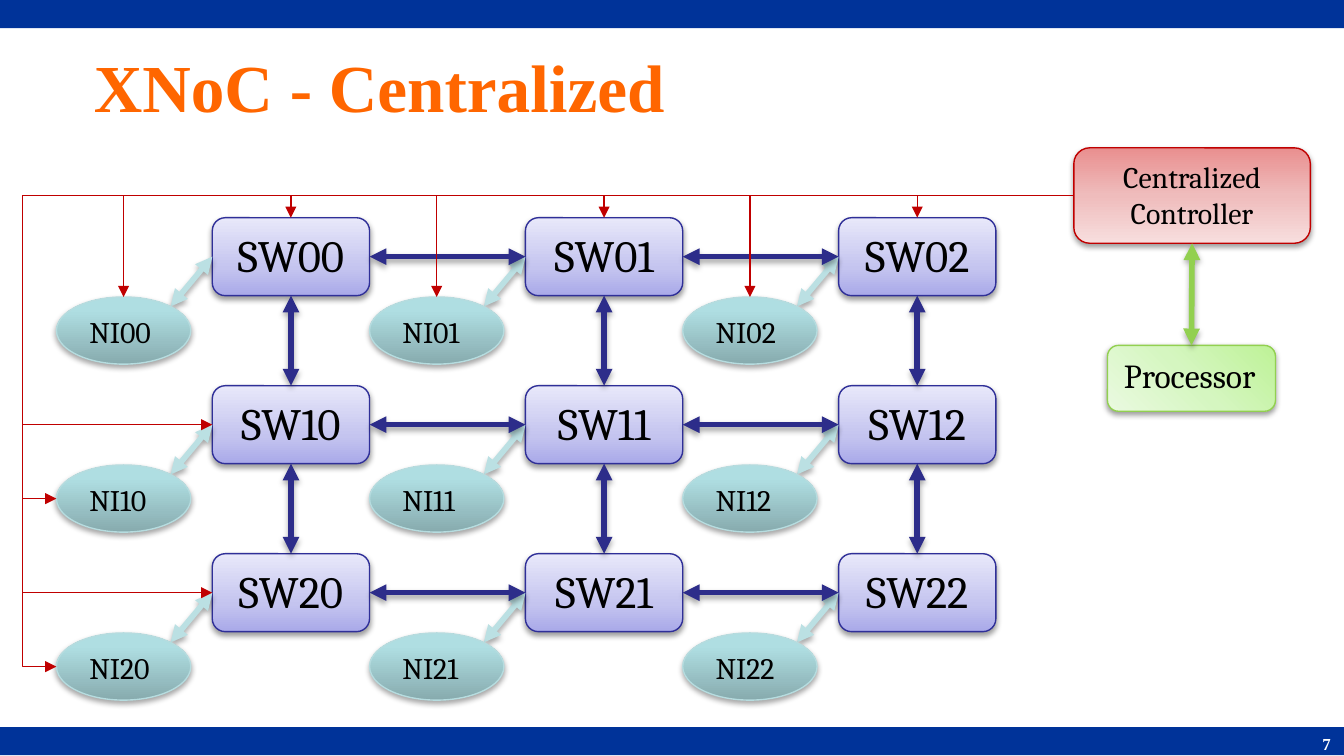
import pptx
import pptx.dml.color
import pptx.enum.shapes
import pptx.enum.text
import pptx.oxml
import pptx.oxml.ns
import pptx.util
from lxml import etree
from pptx.dml.color import RGBColor
from pptx.util import Inches

BAR_BLUE = RGBColor(0x00, 0x33, 0x99)
TITLE_ORANGE = RGBColor(0xFF, 0x66, 0x00)
WHITE = RGBColor(0xFF, 0xFF, 0xFF)
BLACK = RGBColor(0x00, 0x00, 0x00)
SWITCH_LINE = RGBColor(0x2F, 0x2F, 0x98)
MESH_BLUE = RGBColor(0x2D, 0x2D, 0x8A)
INTERFACE_LINE = RGBColor(0xB6, 0xDC, 0xDF)
LINK_TEAL = RGBColor(0xBB, 0xE0, 0xE3)
CONTROL_RED = RGBColor(0xC0, 0x00, 0x00)
PROCESSOR_GREEN = RGBColor(0x92, 0xD0, 0x50)

# Gradient stops: position in percent, colour
SWITCH_STOPS = [(0, RGBColor(0xA9, 0xA9, 0xE9)), (35, RGBColor(0xC4, 0xC4, 0xEF)),
                (100, RGBColor(0xE8, 0xE8, 0xFA))]
INTERFACE_STOPS = [(0, RGBColor(0x87, 0xAB, 0xAE)), (80, RGBColor(0xAF, 0xDE, 0xE2)),
                   (100, RGBColor(0xAF, 0xE0, 0xE4))]
CONTROLLER_STOPS = [(0, RGBColor(0xE9, 0x8F, 0x8F)), (50, RGBColor(0xEF, 0xBC, 0xBC)),
                    (100, RGBColor(0xF7, 0xDE, 0xDE))]
PROCESSOR_STOPS = [(0, RGBColor(0xBE, 0xF2, 0x97)), (50, RGBColor(0xD5, 0xF6, 0xC0)),
                   (100, RGBColor(0xEA, 0xFA, 0xE0))]

SHAPES = pptx.enum.shapes.MSO_SHAPE
CONNECTORS = pptx.enum.shapes.MSO_CONNECTOR
ALIGN = pptx.enum.text.PP_ALIGN
ANCHOR = pptx.enum.text.MSO_ANCHOR
TOP, LEFT, BOTTOM, RIGHT = range(4)

GRID_SIZE = 3
COLUMN_PITCH, ROW_PITCH = 2.33, 1.25
RAIL_X = 0.17


def add_child(parent, tag, **attributes):
    child = etree.SubElement(parent, pptx.oxml.ns.qn(tag))
    for name, value in attributes.items():
        child.set(name, str(value))
    return child


def add_shadow(effects, opacity, distance):
    shadow = add_child(effects, "a:outerShdw", blurRad=pptx.util.Pt(3.1),
                       dist=pptx.util.Pt(distance), dir=90 * 60000, rotWithShape=0)
    color = add_child(shadow, "a:srgbClr", val=BLACK)
    add_child(color, "a:alpha", val=opacity * 1000)


def set_gradient(shape, stops, angle):
    """Fill along an angle, or outward from the top right corner if it is None."""
    shape.fill.gradient()
    gradient = shape._element.spPr.find(pptx.oxml.ns.qn("a:gradFill"))
    gradient.clear()
    stop_list = add_child(gradient, "a:gsLst")
    for position, color in stops:
        stop = add_child(stop_list, "a:gs", pos=position * 1000)
        add_child(stop, "a:srgbClr", val=color)
    if angle is None:
        circle = add_child(gradient, "a:path", path="circle")
        add_child(circle, "a:fillToRect", l=100000, b=100000)
    else:
        add_child(gradient, "a:lin", ang=angle * 60000, scaled=0)


def write_text(shape, text, size, color=BLACK, font="Cambria", bold=False, align=ALIGN.LEFT,
               anchor=ANCHOR.TOP):
    frame = shape.text_frame
    frame.word_wrap = True
    frame.vertical_anchor = anchor
    paragraph = frame.paragraphs[0]
    paragraph.text = text
    paragraph.alignment = align
    paragraph.font.size = pptx.util.Pt(size)
    paragraph.font.name = font
    paragraph.font.bold = bold
    paragraph.font.color.rgb = color


def add_text_box(slide, box, text, **text_format):
    shape = slide.shapes.add_textbox(*map(Inches, box))
    write_text(shape, text, font="Times New Roman", bold=True, anchor=ANCHOR.MIDDLE,
               **text_format)


def add_bar(slide, top):
    bar = slide.shapes.add_shape(SHAPES.RECTANGLE, 0, Inches(top), Inches(10), Inches(0.21))
    bar.shadow.inherit = False
    bar.fill.solid()
    bar.fill.fore_color.rgb = BAR_BLUE
    bar.line.fill.background()


def add_node(slide, kind, box, stops, angle, line_color, text, opacity=38, distance=1.6,
             **text_format):
    node = slide.shapes.add_shape(kind, *map(Inches, box))
    set_gradient(node, stops, angle)
    node.line.color.rgb = line_color
    node.line.width = pptx.util.Pt(0.75)
    node.shadow.inherit = False
    effects = node._element.spPr.find(pptx.oxml.ns.qn("a:effectLst"))
    add_shadow(effects, opacity, distance)
    write_text(node, text, **text_format)
    return node


def style_connector(connector, color, width, both_ends):
    connector.line.color.rgb = color
    connector.line.width = pptx.util.Pt(width)
    line = connector.line._get_or_add_ln()
    if both_ends:
        add_child(line, "a:headEnd", type="triangle")
    add_child(line, "a:tailEnd", type="triangle")
    return add_child(connector._element.spPr, "a:effectLst")


def add_double_arrow(slide, color, start, end, points=(0, 0, 0, 0)):
    """Join (shape, side) pairs; a start of None keeps the given points."""
    arrow = slide.shapes.add_connector(CONNECTORS.STRAIGHT, *map(Inches, points))
    if start:
        arrow.begin_connect(*start)
    arrow.end_connect(*end)
    add_shadow(style_connector(arrow, color, 3, True), 35, 1.8)


def add_control_line(slide, controller, target, side):
    """Run left from the controller, then down to the target's top or left side."""
    start_x, start_y = controller.left, controller.top + controller.height // 2
    end_x, end_y = target.left, target.top
    if side == TOP:
        end_x += target.width // 2
    else:
        end_y += target.height // 2
    line = slide.shapes.add_connector(CONNECTORS.ELBOW, start_x, start_y, end_x, end_y)
    line.begin_connect(controller, LEFT)
    # An ellipse has eight connection sites, and its left one is number 2
    is_ellipse = target.auto_shape_type == SHAPES.OVAL
    line.end_connect(target, 2 if is_ellipse and side == LEFT else side)
    line.end_x, line.end_y = end_x, end_y

    geometry = line._element.spPr.find(pptx.oxml.ns.qn("a:prstGeom"))
    if side == TOP:
        geometry.set("prst", "bentConnector2")
    else:
        bend = round(100000 * (start_x - Inches(RAIL_X)) / (start_x - end_x))
        for guides in geometry.findall(pptx.oxml.ns.qn("a:avLst")):
            geometry.remove(guides)
        add_child(add_child(geometry, "a:avLst"), "a:gd", name="adj1", fmla=f"val {bend}")
    style_connector(line, CONTROL_RED, 0.75, False)


def main():
    # A 16:9 slide
    presentation = pptx.Presentation()
    presentation.slide_width = Inches(10)
    presentation.slide_height = Inches(10) * 9 // 16
    slide = presentation.slides.add_slide(presentation.slide_layouts[6])

    # Bars, title and page number
    add_bar(slide, 5.41)
    add_bar(slide, 0)
    add_text_box(slide, (0.6, 0.21, 7.13, 0.85), "XNoC - Centralized", size=36,
                 color=TITLE_ORANGE)
    add_text_box(slide, (7.92, 5.44, 2.08, 0.19), "7", size=9, color=WHITE, align=ALIGN.RIGHT)

    # Switches, each with its network interface
    cells = [(row, column) for column in range(GRID_SIZE) for row in range(GRID_SIZE)]
    switches, interfaces = {}, {}
    for row, column in cells:
        x, y = column * COLUMN_PITCH, row * ROW_PITCH
        switches[row, column] = add_node(
            slide, SHAPES.ROUNDED_RECTANGLE, (1.58 + x, 1.62 + y, 1.17, 0.58), SWITCH_STOPS,
            270, SWITCH_LINE, f"SW{row}{column}", size=24, align=ALIGN.CENTER)
        add_double_arrow(slide, LINK_TEAL, None, (switches[row, column], LEFT),
                         (1.27 + x, 2.28 + y, 1.56 + x, 1.91 + y))
        interfaces[row, column] = add_node(
            slide, SHAPES.OVAL, (0.42 + x, 2.21 + y, 1, 0.5), INTERFACE_STOPS, 270,
            INTERFACE_LINE, f"NI{row}{column}", opacity=35, distance=1.8, size=16)

    # Mesh links between neighbouring switches
    for row, column in cells:
        switch = switches[row, column]
        if row + 1 < GRID_SIZE:
            add_double_arrow(slide, MESH_BLUE, (switch, BOTTOM), (switches[row + 1, column], TOP))
        if column + 1 < GRID_SIZE:
            add_double_arrow(slide, MESH_BLUE, (switch, RIGHT), (switches[row, column + 1], LEFT))

    # Controller and processor
    controller = add_node(slide, SHAPES.FLOWCHART_ALTERNATE_PROCESS, (7.99, 1.1, 1.76, 0.71),
                          CONTROLLER_STOPS, 90, CONTROL_RED, "Centralized Controller",
                          size=16, align=ALIGN.CENTER)
    processor = add_node(slide, SHAPES.ROUNDED_RECTANGLE, (8.24, 2.57, 1.25, 0.49),
                         PROCESSOR_STOPS, None, PROCESSOR_GREEN, "Processor", size=18)

    # Control lines to the top row and to the first column
    for nodes in (interfaces, switches):
        for column in range(GRID_SIZE):
            add_control_line(slide, controller, nodes[0, column], TOP)
        for row in range(1, GRID_SIZE):
            add_control_line(slide, controller, nodes[row, 0], LEFT)
    add_double_arrow(slide, PROCESSOR_GREEN, (controller, BOTTOM), (processor, TOP))

    presentation.save("out.pptx")


if __name__ == "__main__":
    main()
